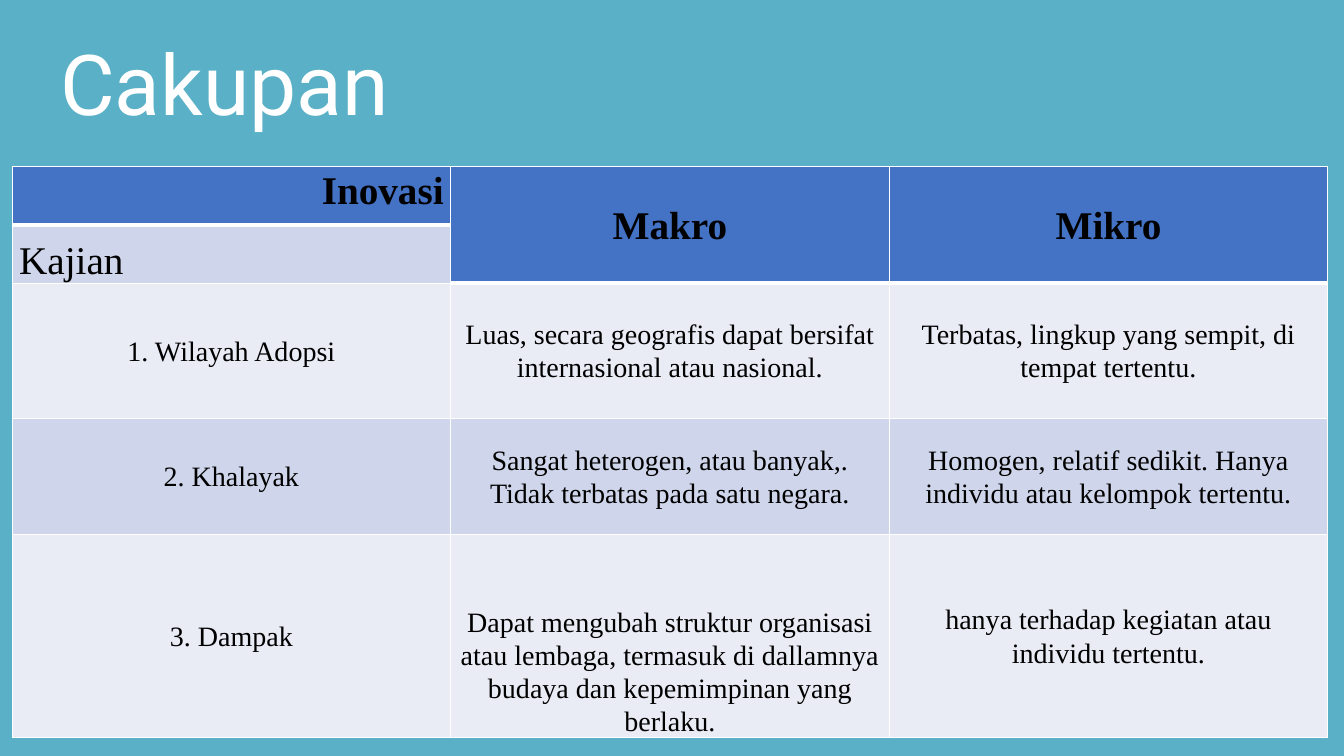
"""Build the "Cakupan" slide: a title above a table of macro and micro innovation."""
from dataclasses import dataclass

import lxml.etree
import pptx
import pptx.dml.color
import pptx.enum.text
import pptx.oxml.ns
import pptx.util

Inches = pptx.util.Inches
Align = pptx.enum.text.PP_ALIGN
Anchor = pptx.enum.text.MSO_ANCHOR


@dataclass(frozen=True)
class Theme:
    """Colours, fonts and type sizes in points."""

    back: str = "5AB0C7"
    head: str = "4472C4"
    bands: tuple[str, str] = ("E9EBF5", "CFD5EA")
    white: str = "FFFFFF"
    ink: str = "000000"
    sans: str = "Roboto"
    serif: str = "Times New Roman"
    title: int = 60
    large: int = 28
    body: int = 20
    thin: int = 1
    thick: int = 3


@dataclass(frozen=True)
class Entry:
    """One table cell with its text and layout."""

    row: int
    col: int
    text: str
    align: Align = Align.CENTER
    anchor: Anchor = Anchor.MIDDLE
    head: bool = False
    span: int = 1


THEME = Theme()
WIDTHS = (4.35, 4.35, 4.35)
HEIGHTS = (0.58, 0.58, 1.34, 1.15, 2.02)
RULES = (1, 2, 2)
ENTRIES = (
    Entry(0, 0, "Inovasi", Align.RIGHT, Anchor.TOP, head=True),
    Entry(0, 1, "Makro", head=True, span=2),
    Entry(0, 2, "Mikro", head=True, span=2),
    Entry(1, 0, "Kajian", Align.LEFT, Anchor.BOTTOM),
    Entry(2, 0, "1. Wilayah Adopsi"),
    Entry(2, 1, "Luas, secara geografis dapat bersifat internasional atau nasional."),
    Entry(2, 2, "Terbatas, lingkup yang sempit, di tempat tertentu."),
    Entry(3, 0, "2. Khalayak"),
    Entry(3, 1, "Sangat heterogen, atau banyak,. Tidak terbatas pada satu negara."),
    Entry(3, 2, "Homogen, relatif sedikit. Hanya individu atau kelompok tertentu."),
    Entry(4, 0, "3. Dampak"),
    Entry(4, 1, "Dapat mengubah struktur organisasi atau lembaga, termasuk di "
          "dallamnya budaya dan kepemimpinan yang berlaku.", anchor=Anchor.BOTTOM),
    Entry(4, 2, "hanya terhadap kegiatan atau individu tertentu."),
)


def color(code: str) -> pptx.dml.color.RGBColor:
    """Turn a hex code into a colour."""
    return pptx.dml.color.RGBColor.from_string(code)


def write(frame, text: str, face: str, size: int, tint: str,
          space: float, align: Align = Align.LEFT, bold: bool = False) -> None:
    """Put one styled run into the first paragraph of a frame."""
    line = frame.paragraphs[0]
    line.alignment = align
    line.line_spacing = space
    run = line.add_run()
    run.text = text
    run.font.name = face
    run.font.size = pptx.util.Pt(size)
    run.font.bold = bold
    run.font.color.rgb = color(tint)


def border(cell, top: int, bottom: int) -> None:
    """Draw the four edges of a cell, ahead of its fill."""
    name = pptx.oxml.ns.qn
    props = cell._tc.get_or_add_tcPr()
    edges = {"lnL": THEME.thin, "lnR": THEME.thin, "lnT": top, "lnB": bottom}
    for place, (tag, width) in enumerate(edges.items()):
        edge = lxml.etree.Element(name(f"a:{tag}"), w=str(pptx.util.Pt(width)))
        fill = lxml.etree.SubElement(edge, name("a:solidFill"))
        lxml.etree.SubElement(fill, name("a:srgbClr"), val=THEME.white)
        props.insert(place, edge)


def weight(edge: int, col: int) -> int:
    """Give the width of a horizontal rule in a column."""
    return THEME.thick if edge == RULES[col] else THEME.thin


def place(table, entry: Entry) -> None:
    """Fill in one table entry, with any cells it spans."""
    cell = table.cell(entry.row, entry.col)
    last = entry.row + entry.span
    if entry.span > 1:
        cell.merge(table.cell(last - 1, entry.col))
    cell.margin_left = cell.margin_right = Inches(0.07)
    cell.margin_top = cell.margin_bottom = 0
    cell.vertical_anchor = entry.anchor
    size = THEME.large if entry.row < 2 else THEME.body
    write(cell.text_frame, entry.text, THEME.serif, size, THEME.ink,
          1.07, entry.align, entry.head)
    for row in range(entry.row, last):
        part = table.cell(row, entry.col)
        part.fill.solid()
        part.fill.fore_color.rgb = color(THEME.head if entry.head else THEME.bands[row % 2])
        border(part, weight(entry.row, entry.col), weight(last, entry.col))


def main() -> None:
    """Build and save the slide."""
    deck = pptx.Presentation()
    deck.slide_width, deck.slide_height = Inches(13.33), Inches(7.5)
    slide = deck.slides.add_slide(deck.slide_layouts[6])
    slide.background.fill.solid()
    slide.background.fill.fore_color.rgb = color(THEME.back)

    title = slide.shapes.add_textbox(Inches(0.5), Inches(0.15), Inches(11.5), Inches(1.45))
    title.text_frame.word_wrap = True
    title.text_frame.vertical_anchor = Anchor.MIDDLE
    write(title.text_frame, "Cakupan", THEME.sans, THEME.title, THEME.white, 0.9)

    table = slide.shapes.add_table(
        len(HEIGHTS), len(WIDTHS), Inches(0.12), Inches(1.65),
        Inches(sum(WIDTHS)), Inches(sum(HEIGHTS))).table
    for column, width in zip(table.columns, WIDTHS):
        column.width = Inches(width)
    for row, height in zip(table.rows, HEIGHTS):
        row.height = Inches(height)
    for entry in ENTRIES:
        place(table, entry)
    deck.save("out.pptx")


if __name__ == "__main__":
    main()
